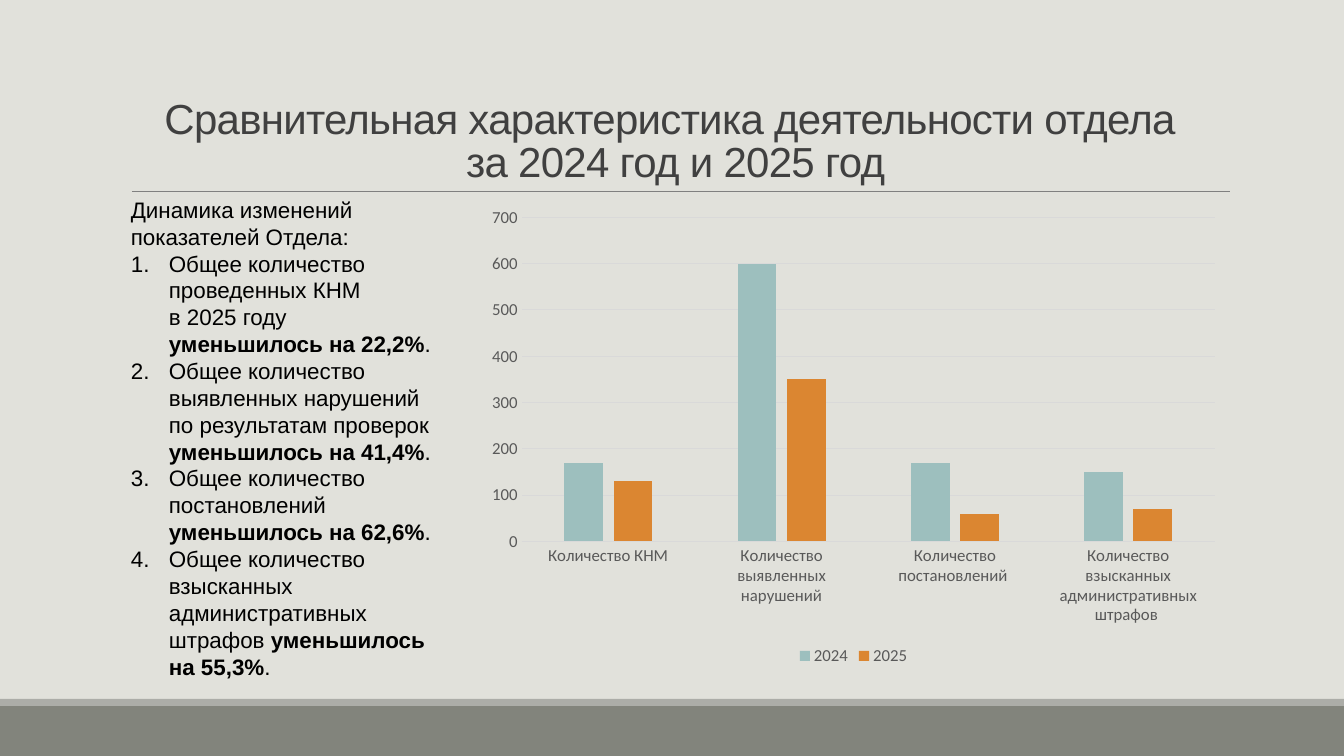
from lxml import etree
from pptx import Presentation
from pptx.chart.data import CategoryChartData
from pptx.dml.color import RGBColor
from pptx.enum.chart import XL_CHART_TYPE, XL_LEGEND_POSITION, XL_TICK_MARK
from pptx.enum.shapes import MSO_CONNECTOR, MSO_SHAPE
from pptx.enum.text import MSO_ANCHOR, MSO_AUTO_SIZE, PP_ALIGN
from pptx.oxml.ns import qn
from pptx.util import Pt

PX = 914400 / 100.8
COLUMNS = XL_CHART_TYPE.COLUMN_CLUSTERED
LEGEND_BOTTOM = XL_LEGEND_POSITION.BOTTOM
NO_TICK = XL_TICK_MARK.NONE
STRAIGHT = MSO_CONNECTOR.STRAIGHT
RECTANGLE = MSO_SHAPE.RECTANGLE
BOTTOM = MSO_ANCHOR.BOTTOM
GROW = MSO_AUTO_SIZE.SHAPE_TO_FIT_TEXT
CENTER = PP_ALIGN.CENTER

BANDS = [(706, 50, "82847C"), (699, 7, "ACADA8")]
CATEGORIES = ["Количество КНМ", "Количество выявленных нарушений",
              "Количество постановлений ",
              "Количество взысканных административных штрафов "]
YEARS = [("2024", (170, 600, 170, 150), "9DBFBE"),
         ("2025", (130, 350, 60, 70), "DB8631")]
FINDINGS = [
    ("Общее количество проведенных КНМ \nв 2025 году ", "уменьшилось на 22,2%"),
    ("Общее количество выявленных нарушений по результатам проверок ",
     "уменьшилось на 41,4%"),
    ("Общее количество постановлений ", "уменьшилось на 62,6%"),
    ("Общее количество взысканных административных штрафов ",
     "уменьшилось \nна 55,3%"),
]


def px(*lengths):
    return [round(length * PX) for length in lengths]


def rgb(value):
    return RGBColor.from_string(value)


prs = Presentation()
prs.slide_width, prs.slide_height = px(1344, 756)
slide = prs.slides.add_slide(prs.slide_layouts[6])
slide.background.fill.solid()
slide.background.fill.fore_color.rgb = rgb("E1E1DB")

# Footer bands and the rule under the title
for top, height, color in BANDS:
    band = slide.shapes.add_shape(RECTANGLE, *px(0, top, 1344, height))
    band.shadow.inherit = False
    band.fill.solid()
    band.fill.fore_color.rgb = rgb(color)
    band.line.fill.background()

rule = slide.shapes.add_connector(STRAIGHT, *px(132, 191, 1230, 191))
rule.line.color.rgb = rgb("808080")
rule.line.width = Pt(0.5)
etree.SubElement(rule._element.spPr, qn("a:effectLst"))

# Title
title = slide.shapes.add_textbox(*px(121, 31, 1109, 160)).text_frame
title.word_wrap = True
title.vertical_anchor = BOTTOM
heading = title.paragraphs[0]
heading.text = "Сравнительная характеристика деятельности отдела \vза 2024 год и 2025 год"
heading.alignment = CENTER
heading.line_spacing = 0.85
for run in heading.runs:
    run.font.name = "Arial"
    run.font.size = Pt(30)
    run.font.color.rgb = rgb("404040")
    run.font._element.set("spc", "-50")

# Chart
chart_data = CategoryChartData()
chart_data.categories = CATEGORIES
for year, values, _ in YEARS:
    chart_data.add_series(year, values)
chart = slide.shapes.add_chart(COLUMNS, *px(477, 198, 753, 472), chart_data).chart
chart.has_title = False
chart.font.name = "Calibri"
chart.font.size = Pt(10)
chart.has_legend = True
chart.legend.position = LEGEND_BOTTOM
chart.legend.include_in_layout = False

columns = chart.plots[0]
columns.vary_by_categories = False
columns.gap_width = 219
columns.overlap = -27
for series, (_, _, color) in zip(columns.series, YEARS):
    series.format.fill.solid()
    series.format.fill.fore_color.rgb = rgb(color)

categories, counts = chart.category_axis, chart.value_axis
for axis in (categories, counts):
    axis.major_tick_mark = NO_TICK
    axis.minor_tick_mark = NO_TICK
for font in (categories.tick_labels.font, counts.tick_labels.font, chart.legend.font):
    font.name = "Calibri"
    font.size = Pt(12)
    font.color.rgb = rgb("595959")
counts.minimum_scale, counts.maximum_scale, counts.major_unit = 0, 700, 100
counts.format.line.fill.background()
for line in (categories.format.line, counts.major_gridlines.format.line):
    line.color.rgb = rgb("D9D9D9")
    line.width = Pt(0.75)

# Findings
findings = slide.shapes.add_textbox(*px(121, 191, 332, 529)).text_frame
findings.word_wrap = True
findings.auto_size = GROW
findings.paragraphs[0].text = "Динамика изменений показателей Отдела:"
indent, = px(38)
for subject, change in FINDINGS:
    item = findings.add_paragraph()
    properties = item._p.get_or_add_pPr()
    properties.set("marL", str(indent))
    properties.set("indent", str(-indent))
    etree.SubElement(properties, qn("a:buFont"), typeface="+mj-lt")
    etree.SubElement(properties, qn("a:buAutoNum"), type="arabicPeriod")
    for text, bold in ((subject, False), (change, True), (".", False)):
        for number, part in enumerate(text.split("\n")):
            if number:
                item.add_line_break()
            run = item.add_run()
            run.text = part
            run.font.bold = bold
for paragraph in findings.paragraphs:
    for run in paragraph.runs:
        run.font.name = "Arial"
        run.font.size = Pt(16)
        run.font.color.rgb = rgb("000000")

prs.save("out.pptx")
